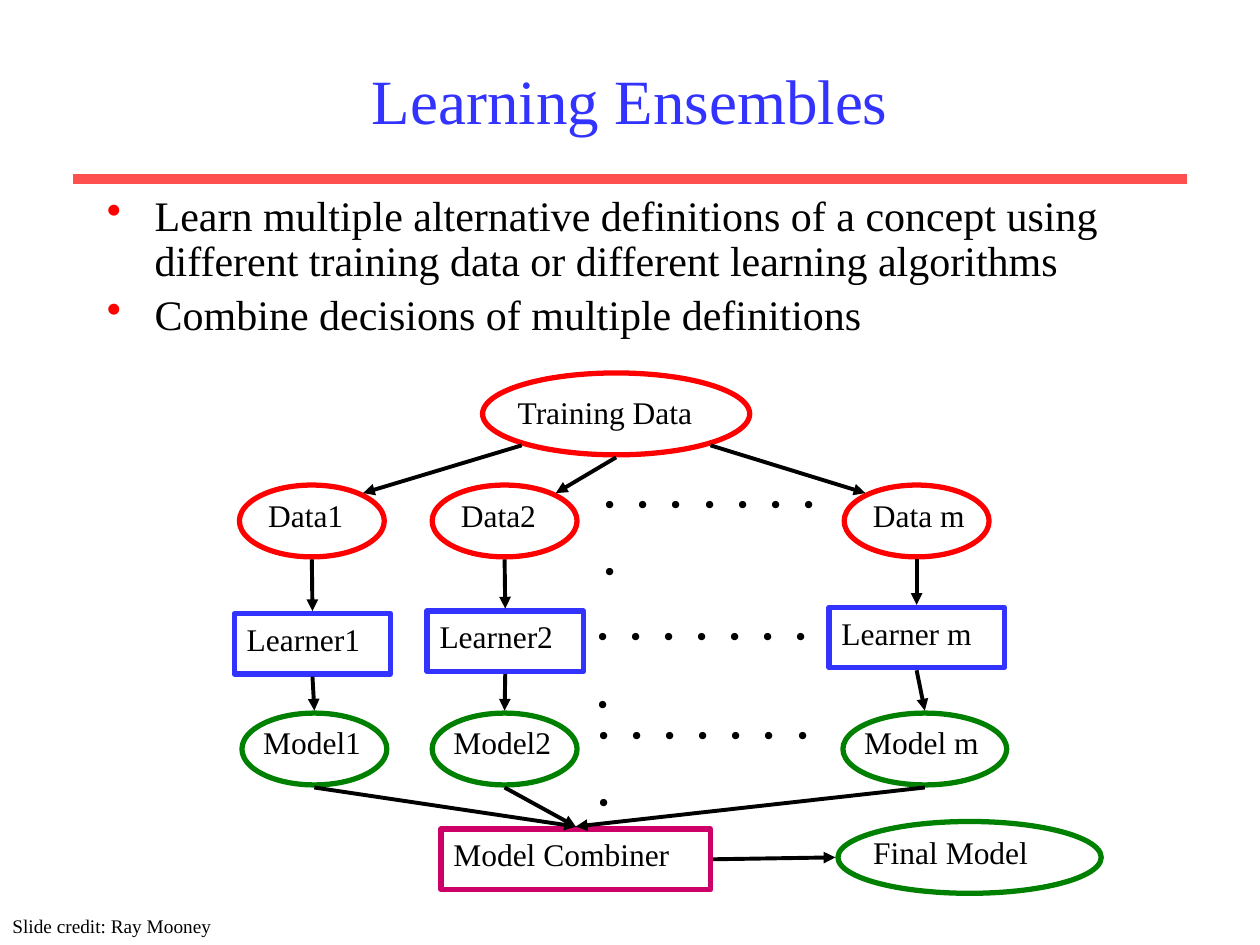
from dataclasses import dataclass
from math import sqrt

from lxml.etree import SubElement
from pptx import Presentation
from pptx.dml.color import RGBColor
from pptx.enum.shapes import MSO_CONNECTOR, MSO_SHAPE
from pptx.enum.text import MSO_ANCHOR, PP_ALIGN
from pptx.oxml.ns import qn
from pptx.util import Inches, Pt

BLACK = RGBColor(0x00, 0x00, 0x00)
BLUE = RGBColor(0x33, 0x33, 0xFF)
RED = RGBColor(0xFF, 0x00, 0x00)
CORAL = RGBColor(0xFF, 0x50, 0x50)
GREEN = RGBColor(0x00, 0x80, 0x00)
MAGENTA = RGBColor(0xCC, 0x00, 0x66)
FONT = "Times New Roman"

deck = Presentation()
deck.slide_width, deck.slide_height = Inches(10), Inches(7.5)
slide = deck.slides.add_slide(deck.slide_layouts[6])

# The slide is a grid of 100 columns by 75 rows.
COL = deck.slide_width / 100
ROW = deck.slide_height / 75
GAP = 0.2  # between an arrow's end and the node it touches


@dataclass
class Node:
    """A diagram step; an inset and label width place a label apart from its outline."""
    label: str
    left: float
    top: float
    width: float
    height: float
    color: RGBColor
    inset: tuple[float, float] | None = None
    label_width: float = 0

    def rim(self, dx: int, dy: int) -> tuple[float, float]:
        """Point just off the outline in direction (dx, dy), each -1, 0 or 1."""
        reach = 1 / sqrt(2) if dx and dy else 1
        x = self.left + self.width / 2 * (1 + dx * reach)
        y = self.top + self.height / 2 * (1 + dy * reach)
        return (x if dy else x + dx * GAP), y + dy * GAP


def cells(left: float, top: float, width: float, height: float) -> tuple[int, ...]:
    return round(left * COL), round(top * ROW), round(width * COL), round(height * ROW)


def add_run(paragraph, text: str, size: float, color: RGBColor = BLACK) -> None:
    run = paragraph.add_run()
    run.text = text
    run.font.name, run.font.size = FONT, Pt(size)
    run.font.color.rgb = color


def add_text(box: tuple[float, ...], text: str, size: float, color: RGBColor = BLACK,
             align=PP_ALIGN.LEFT, anchor=MSO_ANCHOR.TOP) -> None:
    frame = slide.shapes.add_textbox(*cells(*box)).text_frame
    frame.word_wrap, frame.vertical_anchor = True, anchor
    frame.paragraphs[0].alignment = align
    add_run(frame.paragraphs[0], text, size, color)


def add_bullets(box: tuple[float, ...], points: list[str], size: float) -> None:
    frame = slide.shapes.add_textbox(*cells(*box)).text_frame
    frame.word_wrap = True
    for index, point in enumerate(points):
        paragraph = frame.add_paragraph() if index else frame.paragraphs[0]
        paragraph.line_spacing = 0.9
        paragraph.space_before = Pt(size * 0.2)
        props = paragraph._p.get_or_add_pPr()
        props.set("marL", str(Inches(0.38)))
        props.set("indent", str(-Inches(0.38)))
        SubElement(SubElement(props, qn("a:buClr")), qn("a:srgbClr"), val=str(RED))
        SubElement(props, qn("a:buChar"), char="•")
        add_run(paragraph, point, size)


def add_line(start: tuple[float, float], end: tuple[float, float], color: RGBColor,
             width: float, arrow: bool = False) -> None:
    line = slide.shapes.add_connector(
        MSO_CONNECTOR.STRAIGHT, round(start[0] * COL), round(start[1] * ROW),
        round(end[0] * COL), round(end[1] * ROW))
    line.line.color.rgb, line.line.width = color, Pt(width)
    if arrow:
        SubElement(line.line._get_or_add_ln(), qn("a:tailEnd"), type="triangle")
    SubElement(line._element.spPr, qn("a:effectLst"))


def add_arrow(start: tuple[float, float], end: tuple[float, float]) -> None:
    add_line(start, end, BLACK, 2.25, arrow=True)


def add_node(node: Node) -> None:
    """Draw an ellipse with an inset label, or a rectangle that holds its own text."""
    preset = MSO_SHAPE.OVAL if node.inset else MSO_SHAPE.RECTANGLE
    if node.inset:
        dx, dy = node.inset
        add_text((node.left + dx, node.top + dy, node.label_width, 4.3), node.label, 18)
    outline = slide.shapes.add_shape(
        preset, *cells(node.left, node.top, node.width, node.height))
    outline.shadow.inherit = False
    outline.fill.background()
    outline.line.color.rgb, outline.line.width = node.color, Pt(3)
    if not node.inset:
        frame = outline.text_frame
        frame.word_wrap, frame.vertical_anchor = True, MSO_ANCHOR.TOP
        frame.paragraphs[0].alignment = PP_ALIGN.LEFT
        add_run(frame.paragraphs[0], node.label, 18)


add_line((5.8, 14.2), (94.2, 14.2), CORAL, 6)
add_text((7.5, 2.5, 85, 10.8), "Learning Ensembles", 36, BLUE,
         PP_ALIGN.CENTER, MSO_ANCHOR.MIDDLE)
add_bullets((7.5, 15, 85, 13.1), [
    "Learn multiple alternative definitions of a concept using "
    "different training data or different learning algorithms",
    "Combine decisions of multiple definitions",
], 24)

training = Node("Training Data", 38.3, 29.6, 21.2, 6.5, RED, (1.8, 1.1), 17.5)
datasets = [
    Node(label, left, 38.5, 11.5, 5.7, RED, (1.3, 0.4), label_width)
    for label, left, label_width in
    [("Data1", 19, 8.6), ("Data2", 34.3, 8.6), ("Data m", 67, 10.1)]
]
learners = [
    Node(label, left, top, width, 4.8, BLUE)
    for label, left, top, width in
    [("Learner1", 18.6, 48.7, 12.4), ("Learner2", 33.9, 48.5, 12.4),
     ("Learner m", 65.8, 48.2, 13.9)]
]
models = [
    Node(label, left, 56.6, width, 5.7, GREEN, (0.7, 0.3), label_width)
    for label, left, width, label_width in
    [("Model1", 19.2, 11.5, 10.6), ("Model2", 34.3, 11.5, 10.6),
     ("Model m", 66.9, 13, 12.1)]
]
combiner = Node("Model Combiner", 35, 65.8, 21.4, 4.8, MAGENTA)
final = Node(" Final Model", 66.5, 65.2, 20.9, 5.7, GREEN, (1.2, 0.4), 16.7)

for step in [training, *datasets, *learners, *models, combiner, final]:
    add_node(step)

for ellipsis_left, ellipsis_top in [(46.7, 36.7), (46.1, 47.2), (46.2, 55)]:
    add_text((ellipsis_left, ellipsis_top, 19.8, 6.3), " ".join("⋅" * 8), 32)

# Each branch leaves Training Data on one side and enters its data set on the facing side.
for side, entry, dataset, learner, model in zip(
        (-1, 0, 1), (1, 1, -1), datasets, learners, models):
    add_arrow(training.rim(side, 1), dataset.rim(entry, -1))
    add_arrow(dataset.rim(0, 1), learner.rim(0, -1))
    add_arrow(learner.rim(0, 1), model.rim(0, -1))
    add_arrow(model.rim(0, 1), combiner.rim(0, -1))
add_arrow(combiner.rim(1, 0), final.rim(-1, 0))

add_text((0, 72.1, 18.7, 2.9), "Slide credit: Ray Mooney", 11)

deck.save("out.pptx")
